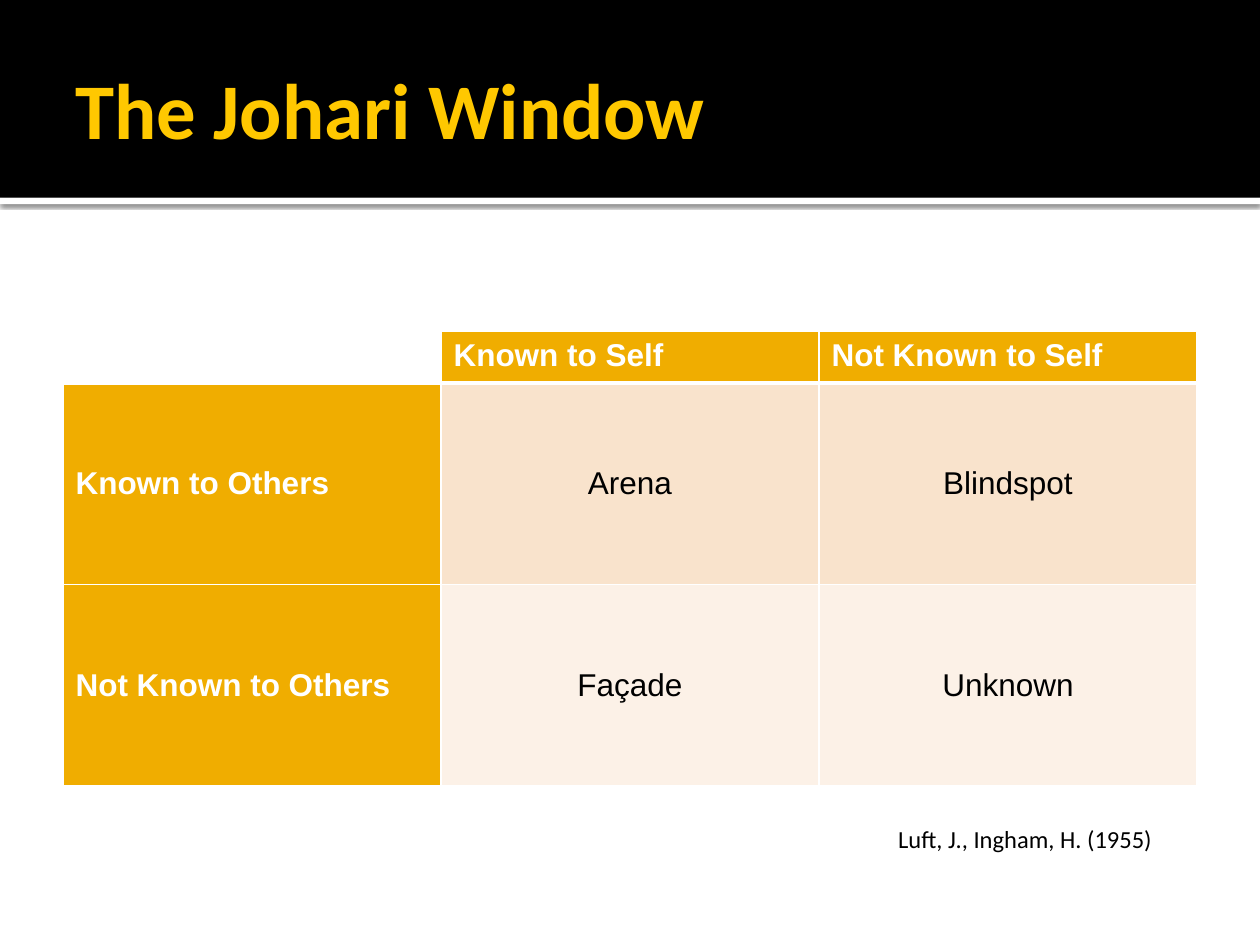
from pptx import Presentation
from pptx.dml.color import RGBColor
from pptx.enum.shapes import MSO_SHAPE as Shape
from pptx.enum.text import MSO_ANCHOR as Anchor, PP_ALIGN as Align
from pptx.oxml import parse_xml
from pptx.oxml.ns import nsdecls
from pptx.util import Inches, Pt

COLORS = {"black": "000000", "white": "FFFFFF", "title": "FFC800",
          "gold": "F0AD00", "peach": "F9E3CC", "cream": "FCF1E7"}
GRID = [["", "Known to Self", "Not Known to Self"],
        ["Known to Others", "Arena", "Blindspot"],
        ["Not Known to Others", "Façade", "Unknown"]]
ROW_HEIGHTS = [0.41, 1.6, 1.6]
ROW_FILLS = ["gold", "peach", "cream"]


class SlideBuilder:
    """Draws styled elements on the current slide."""

    def __init__(self, slide):
        self.slide = slide

    def color(self, name):
        return RGBColor.from_string(COLORS[name])

    def add_text(self, frame, text, color, align=Align.LEFT, **font_format):
        paragraph = frame.paragraphs[0]
        paragraph.alignment = align
        run = paragraph.add_run()
        run.text = text
        run.font.color.rgb = self.color(color)
        for key, value in font_format.items():
            setattr(run.font, key, value)

    def band(self, top, height, color, shadow=False):
        band = self.slide.shapes.add_shape(
            Shape.RECTANGLE, 0, Inches(top), Inches(10), Inches(height))
        band.shadow.inherit = False
        band.fill.solid()
        band.fill.fore_color.rgb = self.color(color)
        band.line.fill.background()
        if shadow:
            effects = band.element.spPr.find(
                "{http://schemas.openxmlformats.org/drawingml/2006/main}effectLst")
            effects.append(parse_xml(
                f'<a:outerShdw {nsdecls("a")} blurRad="{Pt(2.5)}" dist="{Pt(0.8)}" '
                f'dir="5400000" rotWithShape="0"><a:srgbClr val="{COLORS["black"]}">'
                '<a:alpha val="60000"/></a:srgbClr></a:outerShdw>'))

    def label(self, box, text, color, frame_format, **font_format):
        frame = self.slide.shapes.add_textbox(*map(Inches, box)).text_frame
        for key, value in frame_format.items():
            setattr(frame, key, value)
        self.add_text(frame, text, color, **font_format)

    def border(self, cell, side, width):
        cell._tc.get_or_add_tcPr().append(parse_xml(
            f'<a:{side} {nsdecls("a")} w="{Pt(width)}"><a:solidFill>'
            f'<a:srgbClr val="{COLORS["white"]}"/></a:solidFill></a:{side}>'))

    def cell(self, cell, text, row, column):
        heading = row == 0 or column == 0
        for side in ("lnL", "lnR", "lnT", "lnB"):
            header_edge = (row, side) in ((0, "lnB"), (1, "lnT"))
            self.border(cell, side, 3 if header_edge else 1)
        cell.vertical_anchor = Anchor.MIDDLE if row else Anchor.TOP
        if not text:
            cell.fill.background()
            return
        cell.fill.solid()
        cell.fill.fore_color.rgb = self.color("gold" if heading else ROW_FILLS[row])
        self.add_text(cell.text_frame, text, "white" if heading else "black",
                      Align.LEFT if heading else Align.CENTER,
                      name="Arial", size=Pt(18), bold=heading)

    def table(self, left, top, width, rows, heights):
        table = self.slide.shapes.add_table(
            len(rows), len(rows[0]), Inches(left), Inches(top),
            Inches(width), Inches(sum(heights))).table
        for row, (texts, height) in enumerate(zip(rows, heights)):
            table.rows[row].height = Inches(height)
            for column, text in enumerate(texts):
                self.cell(table.cell(row, column), text, row, column)


def main():
    deck = Presentation()
    deck.slide_width, deck.slide_height = Inches(10), Inches(7.5)
    builder = SlideBuilder(deck.slides.add_slide(deck.slide_layouts[6]))
    builder.band(1.57, 0.05, "white", shadow=True)
    builder.band(0, 1.57, "black")
    builder.label((0.5, 0.17, 9, 1.37), "The Johari Window", "title",
                  {"word_wrap": True, "vertical_anchor": Anchor.MIDDLE,
                   "margin_right": Inches(0.05)},
                  name="Calibri", size=Pt(45), bold=True)
    builder.table(0.5, 2.63, 9, GRID, ROW_HEIGHTS)
    builder.label((7.03, 6.49, 2.28, 0.34), "Luft, J., Ingham, H. (1955)", "black",
                  {"word_wrap": False}, name="Calibri", size=Pt(14))
    deck.save("out.pptx")


if __name__ == "__main__":
    main()
